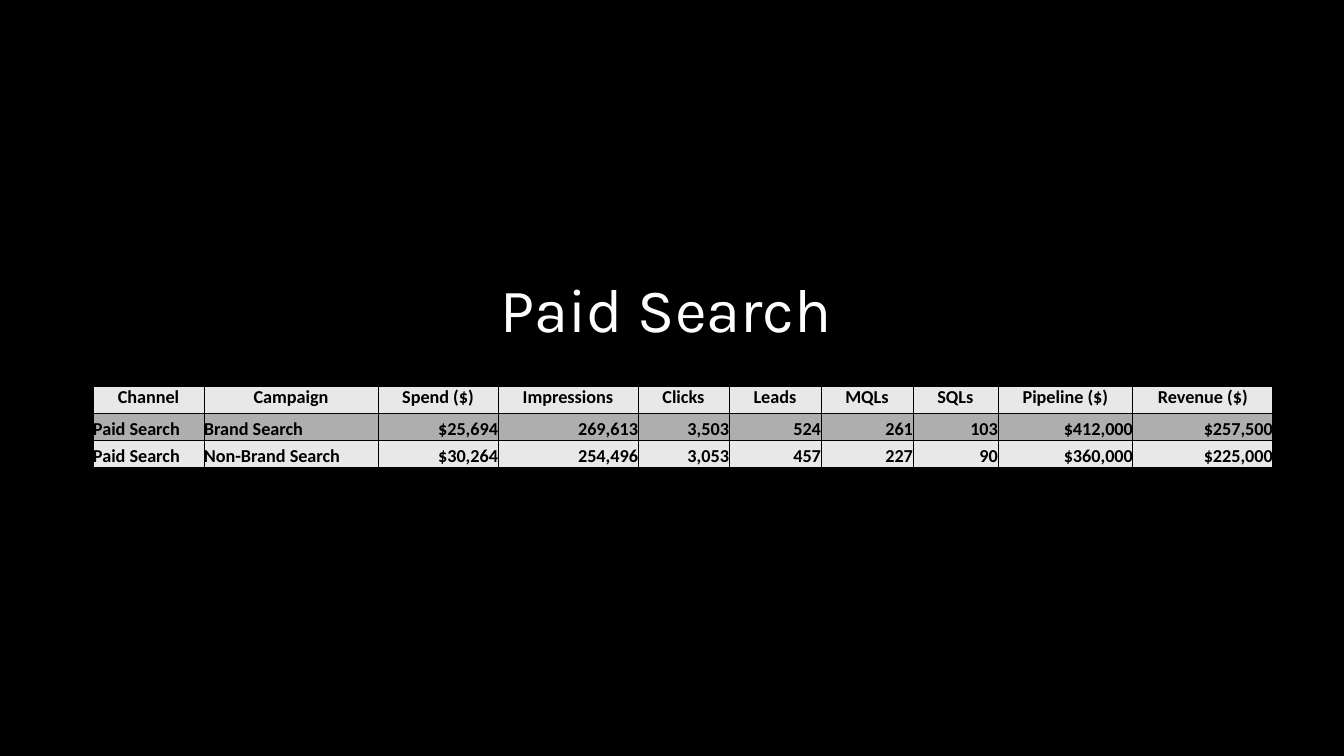
from dataclasses import dataclass

from lxml import etree
from pptx import Presentation
from pptx.dml.color import RGBColor as RGB
from pptx.enum.text import MSO_ANCHOR as Anchor, PP_ALIGN as Align
from pptx.oxml.ns import qn
from pptx.util import Emu, Pt

PX = 914400 / 100.8


@dataclass(frozen=True)
class Theme:
    background: str = "000000"
    title: str = "FFFFFF"
    ink: str = "000000"
    light: str = "E8E8E8"
    dark: str = "AEAEAE"
    title_font: str = "Karla"
    table_font: str = "Calibri"
    title_size: int = 44
    table_size: int = 13
    border: float = 0.5


@dataclass(frozen=True)
class Column:
    heading: str
    width: int
    values: tuple[str, str]
    align: Align = Align.RIGHT


THEME = Theme()
ROW_HEIGHT = 27
COLUMNS = [
    Column("Channel", 111, ("Paid Search", "Paid Search"), Align.LEFT),
    Column("Campaign", 174, ("Brand Search", "Non-Brand Search"), Align.LEFT),
    Column("Spend ($)", 120, ("$25,694", "$30,264")),
    Column("Impressions", 140, ("269,613", "254,496")),
    Column("Clicks", 91, ("3,503", "3,053")),
    Column("Leads", 92, ("524", "457")),
    Column("MQLs", 92, ("261", "227")),
    Column("SQLs", 85, ("103", "90")),
    Column("Pipeline ($)", 135, ("$412,000", "$360,000")),
    Column("Revenue ($)", 140, ("$257,500", "$225,000")),
]


def px(n: int) -> Emu:
    return Emu(round(n * PX))


def write(tf, text: str, *, font: str, size: int, color: str,
          align: Align, bold: bool = False, spacing: float = 1.0) -> None:
    p = tf.paragraphs[0]
    p.alignment = align
    p.line_spacing = spacing
    r = p.add_run()
    r.text = text
    r.font.name, r.font.size, r.font.bold = font, Pt(size), bold
    r.font.color.rgb = RGB.from_string(color)


def add_borders(cell) -> None:
    tc_pr = cell._tc.get_or_add_tcPr()
    for i, side in enumerate(("lnL", "lnR", "lnT", "lnB")):
        ln = etree.Element(qn(f"a:{side}"), w=str(Pt(THEME.border)))
        fill = etree.SubElement(ln, qn("a:solidFill"))
        etree.SubElement(fill, qn("a:srgbClr"), val=THEME.ink)
        tc_pr.insert(i, ln)


def fill_cell(cell, text: str, *, fill: str, align: Align, anchor: Anchor) -> None:
    cell.margin_left = cell.margin_right = cell.margin_top = cell.margin_bottom = 0
    cell.vertical_anchor = anchor
    cell.fill.solid()
    cell.fill.fore_color.rgb = RGB.from_string(fill)
    add_borders(cell)
    write(cell.text_frame, text, font=THEME.table_font, size=THEME.table_size,
          color=THEME.ink, align=align, bold=True)


def add_title(s, text: str) -> None:
    tf = s.shapes.add_textbox(px(87), px(240), px(1159), px(146)).text_frame
    tf.word_wrap = True
    tf.vertical_anchor = Anchor.MIDDLE
    write(tf, text, font=THEME.title_font, size=THEME.title_size,
          color=THEME.title, align=Align.CENTER, spacing=0.9)


def add_results(s) -> None:
    row_count = 1 + len(COLUMNS[0].values)
    width = sum(column.width for column in COLUMNS)
    table = s.shapes.add_table(row_count, len(COLUMNS), px(93), px(386),
                               px(width), px(row_count * ROW_HEIGHT)).table
    for row in table.rows:
        row.height = px(ROW_HEIGHT)
    for c, column in enumerate(COLUMNS):
        table.columns[c].width = px(column.width)
        fill_cell(table.cell(0, c), column.heading, fill=THEME.light,
                  align=Align.CENTER, anchor=Anchor.TOP)
        for r, value in enumerate(column.values, start=1):
            fill_cell(table.cell(r, c), value, fill=THEME.dark if r % 2 else THEME.light,
                      align=column.align, anchor=Anchor.BOTTOM)


def main() -> None:
    prs = Presentation()
    prs.slide_width, prs.slide_height = px(1344), px(756)
    s = prs.slides.add_slide(prs.slide_layouts[6])

    # Background
    s.background.fill.solid()
    s.background.fill.fore_color.rgb = RGB.from_string(THEME.background)

    # Title and campaign results
    add_title(s, "Paid Search")
    add_results(s)
    prs.save("out.pptx")


if __name__ == "__main__":
    main()
